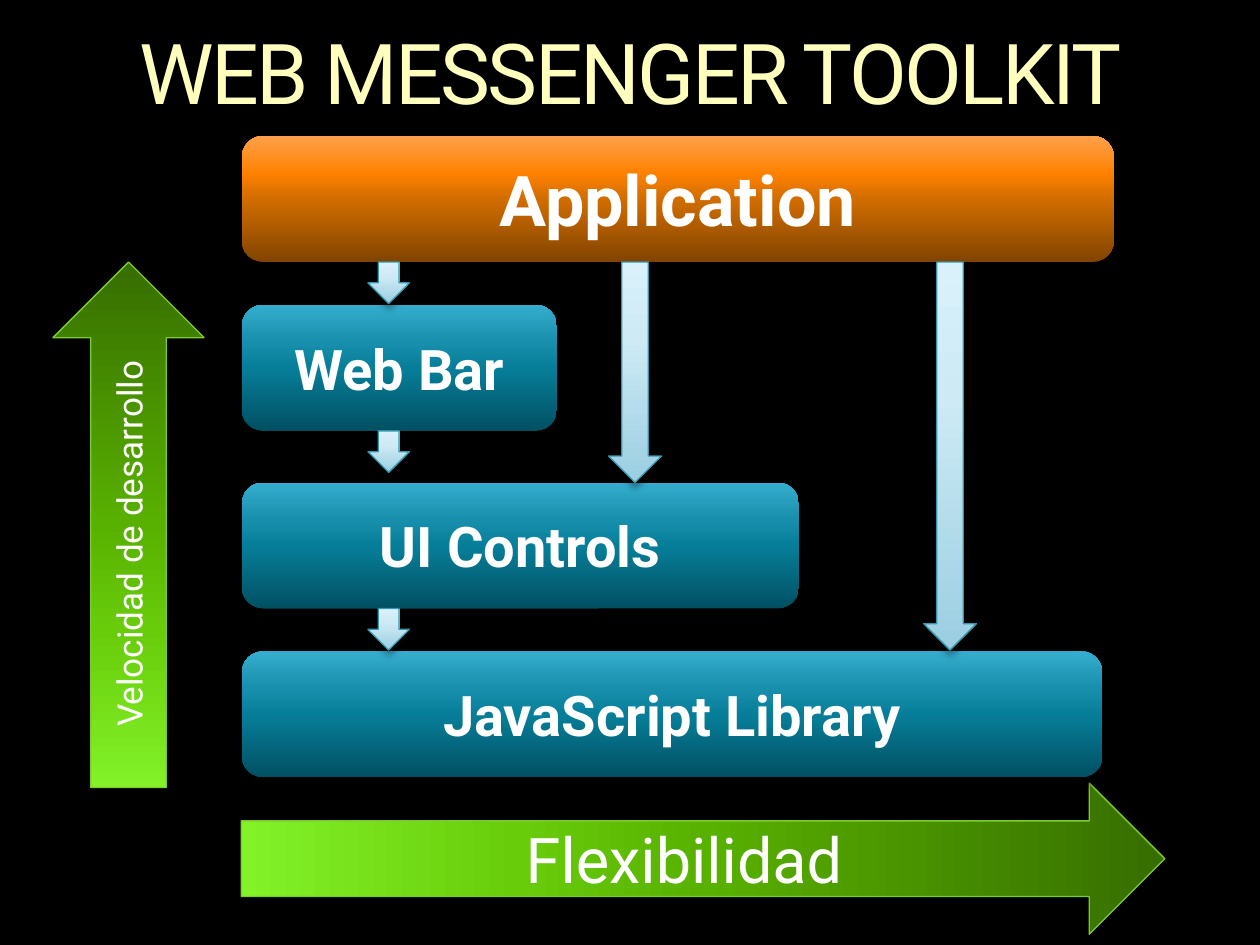
"""Build the Web Messenger Toolkit architecture slide."""
from lxml.etree import SubElement
from pptx import Presentation
from pptx.dml.color import RGBColor
from pptx.enum.shapes import MSO_SHAPE
from pptx.enum.text import MSO_ANCHOR, MSO_AUTO_SIZE, PP_ALIGN
from pptx.oxml.ns import qn
from pptx.util import Inches, Pt

FONT = "Roboto"
BLACK = RGBColor(0x00, 0x00, 0x00)
WHITE = RGBColor(0xFF, 0xFF, 0xFF)
CREAM = RGBColor(0xFF, 0xFF, 0xBD)
LIME = RGBColor(0x7D, 0xCC, 0x2E)
TEAL = RGBColor(0x34, 0x97, 0xAE)


def stops(positions, *colors):
    return [(pos, RGBColor.from_string(c)) for pos, c in zip(positions, colors)]


FOUR = (0, 50, 70, 100)
BLUE = stops(FOUR, "015062", "077E99", "178EAB", "35ADCE")
ORANGE = stops(FOUR, "824400", "D16D00", "FE8100", "FFA04B")
GREEN = stops(FOUR, "376E00", "58B100", "68CC0B", "83F229")
ICE = stops((0, 65, 100), "9BCEE1", "CDEAF5", "D9F1FB")

TITLE = "WEB MESSENGER TOOLKIT"
LEFT, BOX_H = 1.92, 1
LAYERS = [
    ("Application", 1.08, 6.92, 40, ORANGE),
    ("Web Bar", 2.42, 2.5, 32, BLUE),
    ("UI Controls", 3.83, 4.42, 32, BLUE),
    ("JavaScript Library", 5.17, 6.83, 32, BLUE),
]
AXES = [
    ("Velocidad de desarrollo", 0.42, 2.08, 4.17, 180, 20),
    ("Flexibilidad", 4.98, 3.15, 7.33, 270, 36),
]
AXIS_W = 1.2
LINKS = [
    (0, 2.92, 0.33, 0.33),
    (0, 4.83, 0.42, 1.75),
    (0, 7.33, 0.42, 3.08),
    (1, 2.92, 0.33, 0.33),
    (2, 2.92, 0.33, 0.33),
]


def write(sp, text, size, color=WHITE, bold=False, spacing=None, line=None):
    p = sp.text_frame.paragraphs[0]
    p.alignment = PP_ALIGN.CENTER
    p.line_spacing = line
    r = p.add_run()
    r.text = text
    r.font.name, r.font.size, r.font.bold = FONT, Pt(size), bold
    r.font.color.rgb = color
    if spacing:
        r.font._element.set("spc", str(int(spacing * 100)))


def add_block(s, kind, box, gradient, line=None, shadow=(35, 4)):
    sp = s.shapes.add_shape(kind, *map(Inches, box))
    sp.fill.gradient()
    sp.fill.gradient_angle = 90
    gs_list = sp._element.spPr.find(qn("a:gradFill")).find(qn("a:gsLst"))
    gs_list.clear()
    for pos, color in gradient:
        gs = SubElement(gs_list, qn("a:gs"), pos=str(pos * 1000))
        SubElement(gs, qn("a:srgbClr"), val=str(color))
    if line:
        sp.line.color.rgb = line
        sp.line.width = Pt(0.75)
    else:
        sp.line.fill.background()
    sp.shadow.inherit = False
    alpha, blur = shadow
    outer = SubElement(sp._element.spPr.find(qn("a:effectLst")), qn("a:outerShdw"),
                       blurRad=str(Pt(blur)), dist=str(Pt(3)), dir="5400000",
                       rotWithShape="0")
    clr = SubElement(outer, qn("a:srgbClr"), val=str(BLACK))
    SubElement(clr, qn("a:alpha"), val=str(alpha * 1000))
    sp.text_frame.vertical_anchor = MSO_ANCHOR.MIDDLE
    return sp


def main():
    prs = Presentation()
    prs.slide_width, prs.slide_height = Inches(10), Inches(7.5)
    s = prs.slides.add_slide(prs.slide_layouts[6])
    s.background.fill.solid()
    s.background.fill.fore_color.rgb = BLACK

    title = s.shapes.add_textbox(*map(Inches, (0.42, 0.25, 9.17, 0.73)))
    tf = title.text_frame
    tf.word_wrap = True
    tf.auto_size = MSO_AUTO_SIZE.SHAPE_TO_FIT_TEXT
    tf.margin_left = tf.margin_right = tf.margin_top = tf.margin_bottom = 0
    write(title, TITLE, 48, color=CREAM, spacing=-1.5, line=0.9)

    for text, left, top, length, angle, size in AXES:
        sp = add_block(s, MSO_SHAPE.DOWN_ARROW, (left, top, AXIS_W, length), GREEN, LIME)
        sp.rotation = angle
        sp.text_frame._txBody.bodyPr.set("vert", "vert")
        write(sp, text, size)

    for text, top, width, size, gradient in LAYERS:
        sp = add_block(s, MSO_SHAPE.ROUNDED_RECTANGLE, (LEFT, top, width, BOX_H),
                       gradient, shadow=(45, 5))
        write(sp, text, size, bold=True)

    for layer, left, width, length in LINKS:
        top = LAYERS[layer][1] + BOX_H
        add_block(s, MSO_SHAPE.DOWN_ARROW, (left, top, width, length), ICE, TEAL)

    prs.save("out.pptx")


if __name__ == "__main__":
    main()
